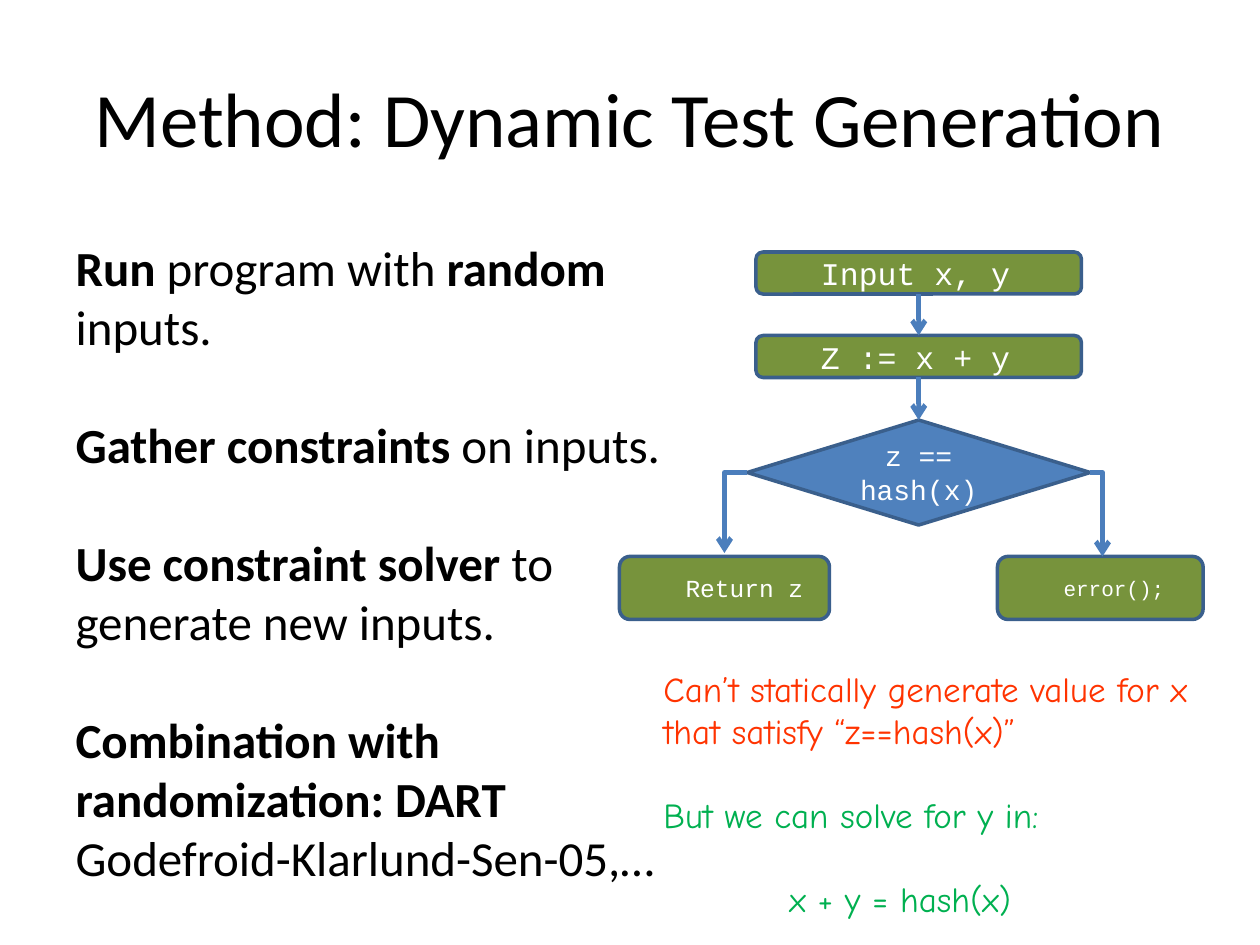
from lxml import etree
from pptx import Presentation
from pptx.dml.color import RGBColor
from pptx.enum.shapes import MSO_CONNECTOR, MSO_SHAPE
from pptx.enum.text import MSO_ANCHOR, MSO_AUTO_SIZE, PP_ALIGN
from pptx.oxml.ns import qn
from pptx.util import Pt

STRAIGHT, ELBOW = MSO_CONNECTOR.STRAIGHT, MSO_CONNECTOR.ELBOW
ROUNDED, DECISION = MSO_SHAPE.ROUNDED_RECTANGLE, MSO_SHAPE.FLOWCHART_DECISION
LEFT, CENTER = PP_ALIGN.LEFT, PP_ALIGN.CENTER
TOP, MIDDLE = MSO_ANCHOR.TOP, MSO_ANCHOR.MIDDLE
NO_FIT = MSO_AUTO_SIZE.NONE

BLACK = RGBColor(0x00, 0x00, 0x00)
WHITE = RGBColor(0xFF, 0xFF, 0xFF)
OLIVE = RGBColor(0x77, 0x93, 0x3C)
BLUE = RGBColor(0x4F, 0x81, 0xBD)
OUTLINE = RGBColor(0x3A, 0x5F, 0x8C)
ARROW = RGBColor(0x4B, 0x7E, 0xBC)
RED = RGBColor(0xFF, 0x33, 0x00)
GREEN = RGBColor(0x00, 0xB0, 0x50)

METHOD_STEPS = [
    (0, [("Run ", True), ("program with ", False), ("random ", True), ("inputs.", False)]),
    (34, [("Gather constraints ", True), ("on inputs.", False)]),
    (34, [("Use constraint solver ", True), ("to", False)]),
    (0, [("generate new inputs.", False)]),
    (34, [("Combination with randomization: DART ", True),
          ("Godefroid-Klarlund-Sen-05,…", False)]),
]
REMARKS = [
    (0, 0, "Can’t statically generate value for x that satisfy “z==hash(x)”", RED),
    (24, 0, "But we can solve for y in:", GREEN),
    (24, 72, "x + y = hash(x)", GREEN),
]


def apply(target, values):
    for name, value in values.items():
        setattr(target, name, value)


def place(holder, left, top, width, height):
    apply(holder, {"left": Pt(left), "top": Pt(top),
                   "width": Pt(width), "height": Pt(height)})


def add_run(paragraph, text, color, **font):
    run = paragraph.add_run()
    run.text = text
    apply(run.font, font)
    run.font.color.rgb = color


def indent(paragraph, margin):
    properties = paragraph._p.get_or_add_pPr()
    properties.set("marL", str(Pt(margin)))
    properties.set("indent", "0")
    return properties


def paragraph_at(frame, index):
    return frame.add_paragraph() if index else frame.paragraphs[0]


def fill_title(title):
    place(title, 36, 21.6, 648, 90)
    frame = title.text_frame
    apply(frame, {"auto_size": NO_FIT, "vertical_anchor": MIDDLE})
    frame.paragraphs[0].alignment = CENTER
    add_run(frame.paragraphs[0], "Method: Dynamic Test Generation", BLACK,
            name="Calibri", size=Pt(44))


def fill_steps(body):
    place(body, 36, 132, 360, 380)
    frame = body.text_frame
    apply(frame, {"auto_size": NO_FIT, "vertical_anchor": TOP, "word_wrap": True})
    for index, (gap, parts) in enumerate(METHOD_STEPS):
        step = paragraph_at(frame, index)
        apply(step, {"space_before": Pt(gap), "space_after": Pt(0), "alignment": LEFT})
        etree.SubElement(indent(step, 0), qn("a:buNone"))
        for text, bold in parts:
            add_run(step, text, BLACK, name="Calibri", size=Pt(28), bold=bold)


def add_remarks(slide):
    frame = slide.shapes.add_textbox(Pt(372), Pt(378), Pt(324), Pt(152.6)).text_frame
    frame.word_wrap = True
    for index, (gap, margin, text, color) in enumerate(REMARKS):
        remark = paragraph_at(frame, index)
        remark.space_before = Pt(gap)
        indent(remark, margin)
        add_run(remark, text, color, name="Comic Neue", size=Pt(20))


def add_node(slide, kind, fill, box, text, size):
    node = slide.shapes.add_shape(kind, *map(Pt, box))
    node.shadow.inherit = False
    node.fill.solid()
    node.fill.fore_color.rgb = fill
    node.line.color.rgb = OUTLINE
    node.line.width = Pt(2)
    frame = node.text_frame
    apply(frame, {"word_wrap": True, "vertical_anchor": MIDDLE})
    label = frame.paragraphs[0]
    label.alignment = CENTER
    add_run(label, text, WHITE, name="Courier New", size=Pt(size))
    return node


def add_statement(slide, box, text, size):
    statement = add_node(slide, ROUNDED, OLIVE, box, text, size)
    frame = statement.text_frame
    apply(frame, {"margin_left": 0, "margin_right": 0})
    frame.paragraphs[0].alignment = LEFT
    indent(frame.paragraphs[0], 36)
    return statement


def add_arrow(slide, kind, start=(0, 0), end=(0, 0)):
    arrow = slide.shapes.add_connector(kind, *map(Pt, start + end))
    arrow.line.color.rgb = ARROW
    arrow.line.width = Pt(2.75)
    etree.SubElement(arrow.line._get_or_add_ln(), qn("a:tailEnd"), type="arrow")
    properties = arrow._element.spPr
    etree.SubElement(properties, qn("a:effectLst"))
    if kind == ELBOW:
        properties.find(qn("a:prstGeom")).set("prst", "bentConnector2")
    return arrow


def add_flow(slide):
    read = add_statement(slide, (432, 144, 186, 24), "Input x, y", 18)
    assign = add_statement(slide, (432, 191.7, 186, 24), "Z := x + y", 18)
    check = add_node(slide, DECISION, BLUE, (427, 240, 196, 60), "z == hash(x)", 16)
    add_statement(slide, (354, 318, 120, 36), "Return z", 14)
    add_statement(slide, (570, 318, 117.5, 36), "error();", 12)
    for upper, lower in ((read, assign), (assign, check)):
        arrow = add_arrow(slide, STRAIGHT)
        arrow.begin_connect(upper, 2)
        arrow.end_connect(lower, 0)
    add_arrow(slide, ELBOW, (427, 270), (414, 316))
    add_arrow(slide, ELBOW, (623, 270), (630, 318))


def main():
    deck = Presentation()
    apply(deck, {"slide_width": Pt(720), "slide_height": Pt(540)})
    slide = deck.slides.add_slide(deck.slide_layouts[1])
    fill_title(slide.shapes.title)
    fill_steps(slide.placeholders[1])
    add_remarks(slide)
    add_flow(slide)
    deck.save("out.pptx")


if __name__ == "__main__":
    main()
